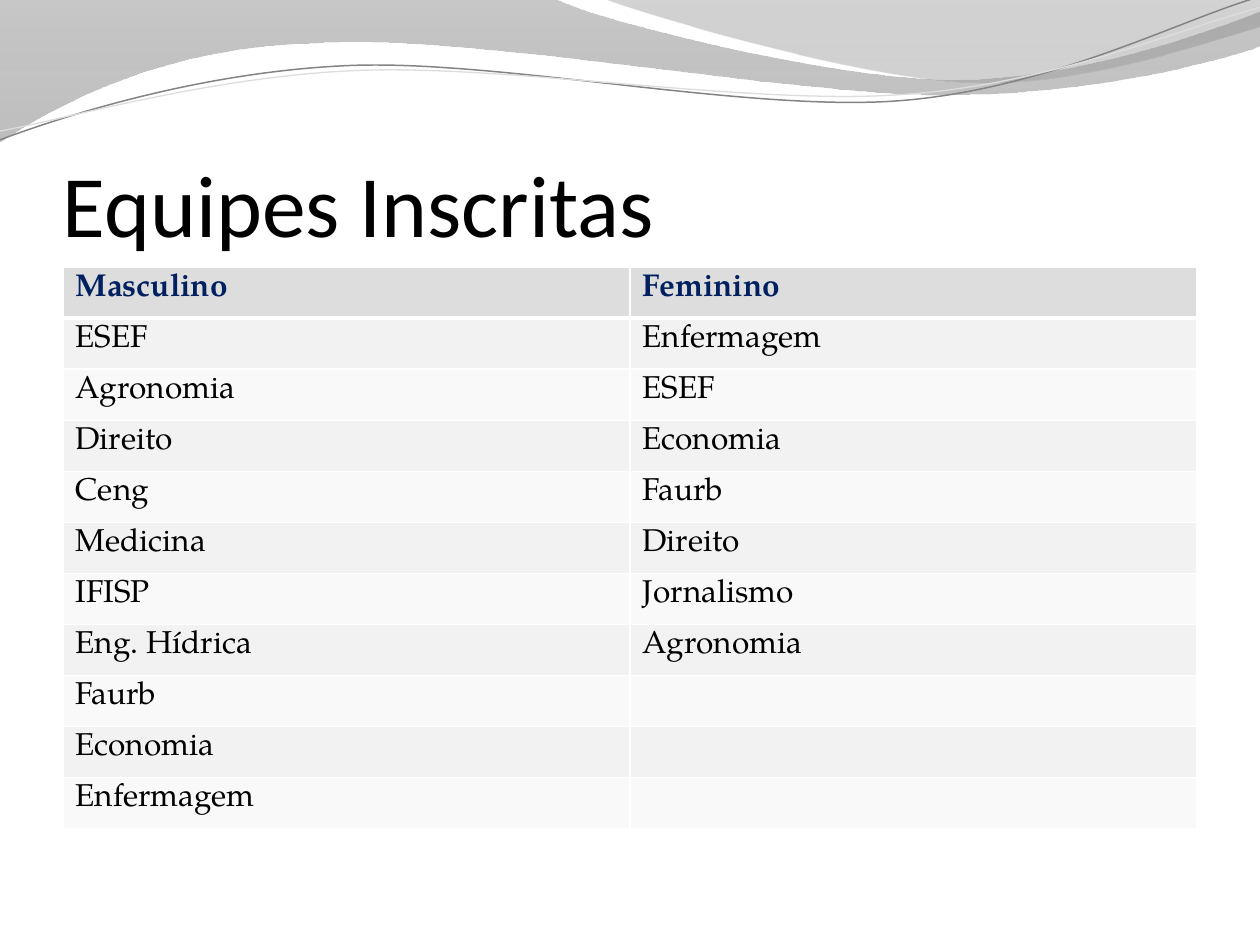
from itertools import zip_longest
from math import cos, radians, sin

from lxml import etree
from pptx import Presentation
from pptx.dml.color import RGBColor
from pptx.enum.text import MSO_ANCHOR
from pptx.oxml.ns import qn
from pptx.util import Inches, Pt

BOTTOM = MSO_ANCHOR.BOTTOM

COLORS = {
    "text": "000000", "heading": "002060", "border": "FFFFFF",
    "header": "DDDDDD", "odd": "F2F2F2", "even": "F9F9F9",
    "dark_line": "848484", "light_line": "DDDDDD",
    "wave_top": "848484", "wave_bottom": "888888",
    "crest_top": "6F6F6F", "crest_bottom": "9D9D9D",
}
TITLE = "Equipes Inscritas"
TEAMS = {
    "Masculino": ["ESEF", "Agronomia", "Direito", "Ceng", "Medicina", "IFISP",
                  "Eng. Hídrica", "Faurb", "Economia", "Enfermagem"],
    "Feminino": ["Enfermagem", "ESEF", "Economia", "Faurb", "Direito",
                 "Jornalismo", "Agronomia"],
}
BANDS = [
    ([[(0, 0)], [(4.4, -0.01)],
      [(4.76, 0.17), (6.64, 0.63), (7.58, 0.63)],
      [(8.53, 0.63), (9.58, 0.26), (10, 0.09)], [(10.01, 0.36)],
      [(9.83, 0.44), (8.7, 0.76), (7.46, 0.75)],
      [(6.22, 0.75), (3.82, 0.28), (2.57, 0.34)],
      [(1.29, 0.36), (0.46, 0.83), (-0.01, 1.13)], [(0, 0)]],
     [(0, "wave_top", 45), (1, "wave_bottom", 55)]),
    ([[(4.79, -0.01)], [(5.09, 0.11), (6.82, 0.62), (7.69, 0.65)],
      [(8.56, 0.69), (9.61, 0.32), (10, 0.21)], [(10, 0)], [(4.79, -0.01)]],
     [(0, "crest_top", 30), (0.8, "crest_bottom", 45)]),
]
RIPPLES = [
    ([[(0, 1.11)], [(0.48, 0.93), (1.58, 0.57), (2.77, 0.52)],
      [(3.95, 0.47), (5.93, 0.89), (7.13, 0.8)],
      [(8.33, 0.71), (9.38, 0.15), (9.98, -0.02)]],
     (4.99, 0.57), "dark_line", 0.85),
    ([[(0, 1.04)], [(0.47, 0.96), (1.64, 0.61), (2.83, 0.56)],
      [(4.03, 0.51), (5.97, 0.84), (7.17, 0.75)],
      [(8.36, 0.67), (9.41, 0.21), (10, 0.06)]],
     (5, 0.59), "light_line", 0.75),
]
TILT = 2.7


def rgb(name):
    return RGBColor.from_string(COLORS[name])


def turn(point, center, degrees):
    dx, dy = point[0] - center[0], point[1] - center[1]
    c, n = cos(radians(degrees)), sin(radians(degrees))
    return center[0] + dx * c - dy * n, center[1] + dx * n + dy * c


def add_outline(slide, segments, close):
    points = [(Inches(x), Inches(y)) for segment in segments for x, y in segment]
    builder = slide.shapes.build_freeform(*points[0])
    builder.add_line_segments(points[1:], close=close)
    s = builder.convert_to_shape()
    s.shadow.inherit = False
    lines = iter(list(s._element.spPr.iter(qn("a:lnTo"))))
    for segment in segments[1:]:
        steps = [next(lines) for _ in segment]
        if len(steps) == 3:
            curve = etree.Element(qn("a:cubicBezTo"))
            steps[0].addprevious(curve)
            for step in steps:
                curve.append(step[0])
                step.getparent().remove(step)
    return s


def add_band(slide, segments, stops):
    s = add_outline(slide, segments, True)
    s.line.fill.background()
    s.fill.gradient()
    s.fill.gradient_angle = 270
    for stop, (position, color, _) in zip(s.fill.gradient_stops, stops):
        stop.position = position
        stop.color.rgb = rgb(color)
    for clr, (_, _, opacity) in zip(s._element.spPr.iter(qn("a:srgbClr")), stops):
        etree.SubElement(clr, qn("a:alpha"), val=str(opacity * 1000))


def add_ripple(slide, segments, center, color, width):
    level = [[turn(p, center, TILT) for p in segment] for segment in segments]
    s = add_outline(slide, level, False)
    s.rotation = -TILT
    s.fill.background()
    s.line.color.rgb = rgb(color)
    s.line.width = Pt(width)


def write(tf, text, size=18, font="TeX Gyre Pagella", color="text", bold=False):
    r = tf.paragraphs[0].add_run()
    r.text = text
    r.font.size, r.font.name, r.font.bold = Pt(size), font, bold
    r.font.color.rgb = rgb(color)


def set_borders(cell, **widths):
    tcPr = cell._tc.get_or_add_tcPr()
    for side in "LRTB":
        ln = etree.SubElement(tcPr, qn("a:ln" + side), w=str(Pt(widths.get(side, 1))))
        fill = etree.SubElement(ln, qn("a:solidFill"))
        etree.SubElement(fill, qn("a:srgbClr"), val=COLORS["border"])


def add_teams(slide):
    rows = [tuple(TEAMS), *zip_longest(*TEAMS.values(), fillvalue="")]
    table = slide.shapes.add_table(len(rows), len(TEAMS), Inches(0.5), Inches(2.12),
                                   Inches(9), Inches(4.46)).table
    for i, row in enumerate(rows):
        header = i == 0
        fill = "header" if header else "odd" if i % 2 else "even"
        for j, team in enumerate(row):
            cell = table.cell(i, j)
            set_borders(cell, T=3 if i == 1 else 1, B=3 if header else 1)
            cell.fill.solid()
            cell.fill.fore_color.rgb = rgb(fill)
            if team:
                write(cell.text_frame, team, bold=header,
                      color="heading" if header else "text")


def add_title(slide):
    tf = slide.shapes.add_textbox(Inches(0.5), Inches(0.77),
                                  Inches(9), Inches(1.25)).text_frame
    tf.word_wrap = True
    tf.vertical_anchor = BOTTOM
    tf.margin_left = tf.margin_right = tf.margin_bottom = 0
    write(tf, TITLE, size=50, font="Calibri")


def main():
    prs = Presentation()
    prs.slide_width, prs.slide_height = Inches(10), Inches(7.5)
    slide = prs.slides.add_slide(prs.slide_layouts[6])
    for band in BANDS:
        add_band(slide, *band)
    for ripple in RIPPLES:
        add_ripple(slide, *ripple)
    add_title(slide)
    add_teams(slide)
    prs.save("out.pptx")


if __name__ == "__main__":
    main()
